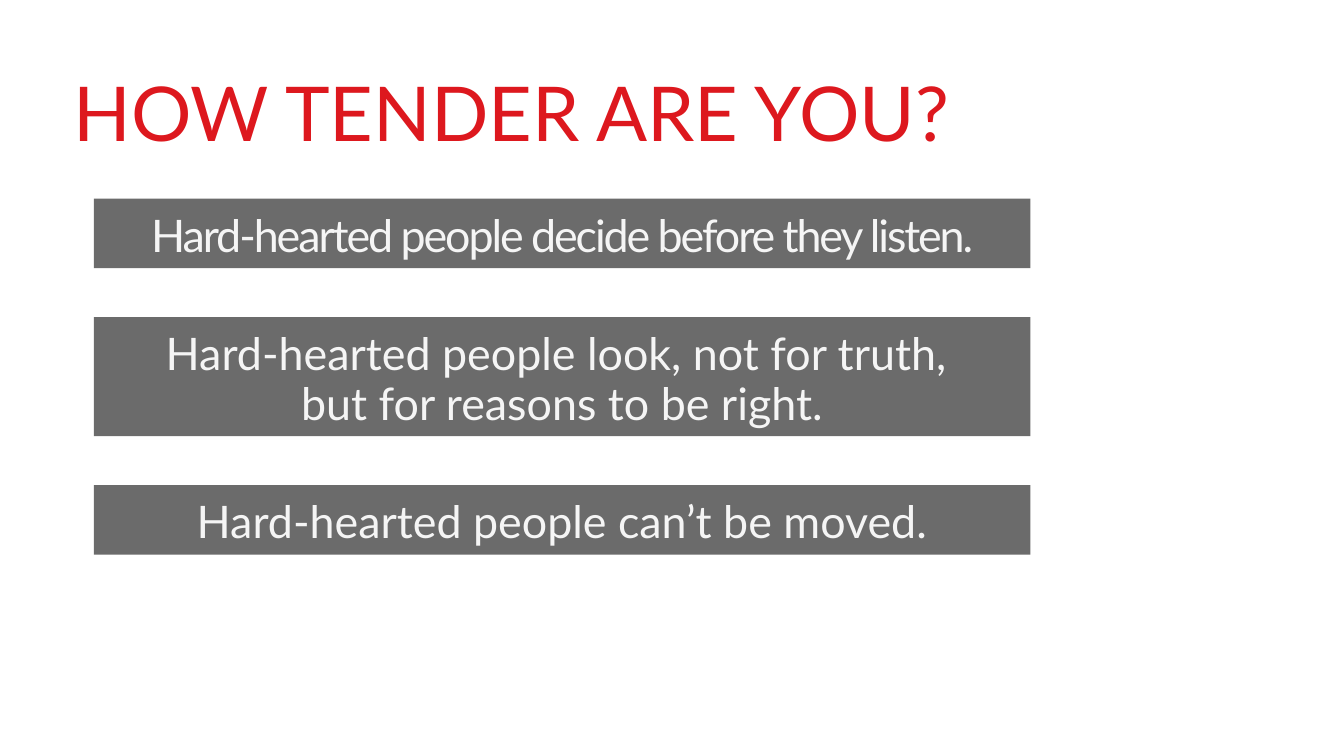
from pptx import Presentation
from pptx.dml.color import RGBColor
from pptx.enum.shapes import MSO_SHAPE
from pptx.enum.text import MSO_ANCHOR, PP_ALIGN
from pptx.util import Pt

RECT = MSO_SHAPE.RECTANGLE
MIDDLE = MSO_ANCHOR.MIDDLE
LEFT, CENTER = PP_ALIGN.LEFT, PP_ALIGN.CENTER

COLORS = {"title": "DD181E", "bar": "6B6B6B", "bar_text": "F5F5F5"}
FONT = "Lato"

BAR_LEFT, BAR_TOP, BAR_WIDTH, BAR_GAP = 67, 141.8, 669, 35
# Text, bar height, letter spacing in hundredths of a point
BARS = [
    ("Hard-hearted people decide before they listen.", 49.7, -150),
    ("Hard-hearted people look, not for truth, \vbut for reasons to be right.", 85, 0),
    ("Hard-hearted people can’t be moved.", 49.7, 0),
]


def color(name):
    return RGBColor.from_string(COLORS[name])


def set_text(tf, text, size, color_name, align, spacing=0):
    tf.word_wrap = True
    p = tf.paragraphs[0]
    p.text = text
    p.alignment = align
    for r in p.runs:
        for name, value in {"name": FONT, "size": Pt(size)}.items():
            setattr(r.font, name, value)
        r.font.color.rgb = color(color_name)
        if spacing:
            r._r.get_or_add_rPr().set("spc", str(spacing))
    return p


def add_title(s, text):
    sp = s.shapes.add_textbox(Pt(45.4), Pt(43.2), Pt(877.7), Pt(72.7))
    set_text(sp.text_frame, text, 54, "title", LEFT)


def add_bar(s, top, text, height, spacing):
    sp = s.shapes.add_shape(RECT, Pt(BAR_LEFT), Pt(top), Pt(BAR_WIDTH), Pt(height))
    sp.shadow.inherit = False
    sp.fill.solid()
    sp.fill.fore_color.rgb = color("bar")
    sp.line.fill.background()
    tf = sp.text_frame
    frame = {"margin_left": Pt(7.2), "margin_right": Pt(7.2), "margin_top": Pt(7.2),
             "margin_bottom": Pt(3.6), "vertical_anchor": MIDDLE}
    for name, value in frame.items():
        setattr(tf, name, value)
    p = set_text(tf, text, 32, "bar_text", CENTER, spacing)
    p.line_spacing = Pt(36)


def main():
    prs = Presentation()
    prs.slide_width, prs.slide_height = Pt(960), Pt(540)
    s = prs.slides.add_slide(prs.slide_layouts[6])

    add_title(s, "HOW TENDER ARE YOU?")

    # Bars stacked with equal gaps
    top = BAR_TOP
    for text, height, spacing in BARS:
        add_bar(s, top, text, height, spacing)
        top += height + BAR_GAP

    prs.save("out.pptx")


if __name__ == "__main__":
    main()
